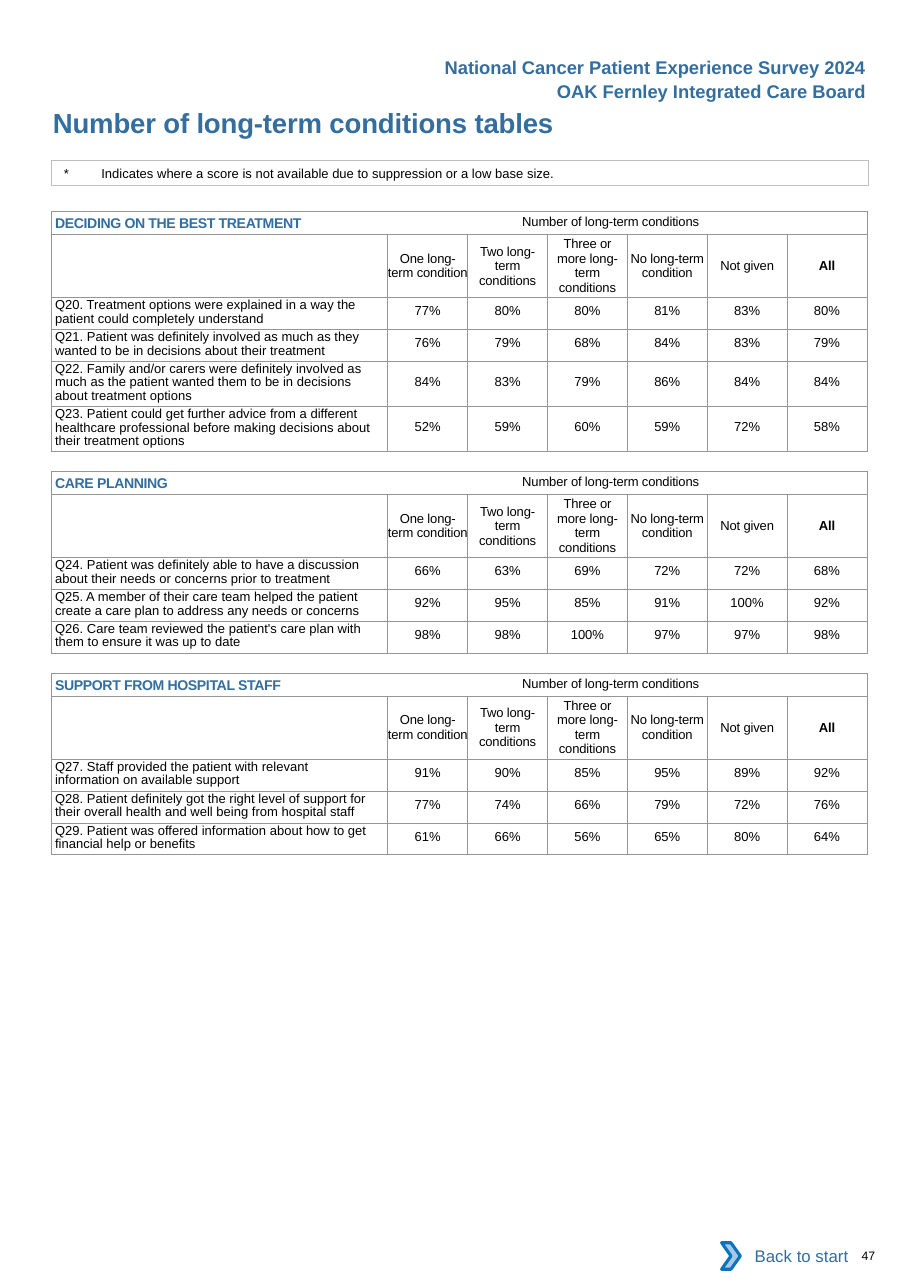
"""Build the page of survey tables by number of long-term conditions."""
from lxml import etree
from pptx import Presentation
from pptx.dml.color import RGBColor
from pptx.enum.shapes import MSO_SHAPE
from pptx.enum.text import MSO_ANCHOR, PP_ALIGN
from pptx.oxml.ns import qn
from pptx.util import Inches, Pt

BLUE = RGBColor(0x33, 0x6E, 0x9F)
BLACK = RGBColor(0, 0, 0)
WHITE = RGBColor(0xFF, 0xFF, 0xFF)
SILVER = RGBColor(0xBF, 0xBF, 0xBF)
GREY = RGBColor(0x93, 0x95, 0x98)
SKY = RGBColor(0xA8, 0xC7, 0xE9)
AZURE = RGBColor(0x0A, 0x74, 0xBB)
RECT, CHEVRON = MSO_SHAPE.RECTANGLE, MSO_SHAPE.CHEVRON
TOP, MIDDLE = MSO_ANCHOR.TOP, MSO_ANCHOR.MIDDLE
LEFT, CENTER, RIGHT = PP_ALIGN.LEFT, PP_ALIGN.CENTER, PP_ALIGN.RIGHT

SIDES = ("margin_left", "margin_top", "margin_right", "margin_bottom")
BODY = {"size": Pt(8.5), "bold": False}
BOLD = {"size": Pt(8.5), "bold": True}
HEAD = {"size": Pt(15.8), "bold": True}
TITLE = {"size": Pt(18), "bold": True}
BANNER = {"size": Pt(12), "bold": True}
LINK = {"size": Pt(11), "bold": False}
FOLIO = {"size": Pt(8), "bold": False}

GROUPS = ["One long-term condition", "Two long-term conditions",
          "Three or more long-term conditions", "No long-term condition",
          "Not given", "All"]
TABLES = [
    ("DECIDING ON THE BEST TREATMENT", [
        (2, "Q20. Treatment options were explained in a way the patient could completely understand",
         (77, 80, 80, 81, 83, 80)),
        (2, "Q21. Patient was definitely involved as much as they wanted to be in decisions about their treatment",
         (76, 79, 68, 84, 83, 79)),
        (3, "Q22. Family and/or carers were definitely involved as much as the patient wanted them to be in decisions about treatment options",
         (84, 83, 79, 86, 84, 84)),
        (3, "Q23. Patient could get further advice from a different healthcare professional before making decisions about their treatment options",
         (52, 59, 60, 59, 72, 58)),
    ]),
    ("CARE PLANNING", [
        (2, "Q24. Patient was definitely able to have a discussion about their needs or concerns prior to treatment",
         (66, 63, 69, 72, 72, 68)),
        (2, "Q25. A member of their care team helped the patient create a care plan to address any needs or concerns",
         (92, 95, 85, 91, 100, 92)),
        (2, "Q26. Care team reviewed the patient's care plan with them to ensure it was up to date",
         (98, 98, 100, 97, 97, 98)),
    ]),
    ("SUPPORT FROM HOSPITAL STAFF", [
        (2, "Q27. Staff provided the patient with relevant information on available support",
         (91, 90, 85, 95, 89, 92)),
        (2, "Q28. Patient definitely got the right level of support for their overall health and well being from hospital staff",
         (77, 74, 66, 79, 72, 76)),
        (2, "Q29. Patient was offered information about how to get financial help or benefits",
         (61, 66, 56, 65, 80, 64)),
    ]),
]


def write(par, text, look, color=BLACK, align=LEFT, space=0):
    par.alignment = align
    run = par.add_run()
    run.text = text
    run.font.name = "Arial"
    run.font.color.rgb = color
    run.font._element.set("spc", str(space))
    for name, value in look.items():
        setattr(run.font, name, value)
    return run


def indent(par, left, tab=None):
    props = par._p.get_or_add_pPr()
    props.set("marL", str(Inches(left)))
    if tab:
        tabs = etree.SubElement(props, qn("a:tabLst"))
        etree.SubElement(tabs, qn("a:tab"), pos=str(Inches(tab)), algn="l")


deck = Presentation()
deck.slide_width, deck.slide_height = Inches(8.26), Inches(11.69)
slide = deck.slides.add_slide(deck.slide_layouts[5])
shapes = slide.shapes

title = shapes.title
title.left, title.top = Inches(0.47), Inches(0.96)
title.width, title.height = Inches(4.66), Inches(0.3)
frame = title.text_frame
frame.vertical_anchor = TOP
for side in SIDES:
    setattr(frame, side, 0)
write(frame.paragraphs[0], "Number of long-term conditions tables", TITLE, BLUE, space=-10)
indent(frame.paragraphs[0], 0.01)

for left, top, width, text in [
    (3.92, 0.46, 4.04, "National Cancer Patient Experience Survey 2024"),
    (4.95, 0.68, 3.01, "OAK Fernley Integrated Care Board"),
]:
    box = shapes.add_textbox(Inches(left), Inches(top), Inches(width), Inches(0.3))
    box.text_frame.word_wrap = False
    write(box.text_frame.paragraphs[0], text, BANNER, BLUE, RIGHT)

note = shapes.add_shape(RECT, Inches(0.47), Inches(1.46), Inches(7.41), Inches(0.22))
note.shadow.inherit = False
note.fill.background()
note.line.color.rgb = SILVER
note.line.width = Pt(0.5)
frame = note.text_frame
frame.vertical_anchor = TOP
for side, gap in zip(SIDES, (0, 0.04, 0, 0.04)):
    setattr(frame, side, Inches(gap))
write(frame.paragraphs[0],
      "*\tIndicates where a score is not available due to suppression or a low base size.", BODY)
indent(frame.paragraphs[0], 0.11, 0.34)

top = 1.92
for name, asks in TABLES:
    heights = [0.21, 0.57] + [0.05 + 0.12 * lines for lines, _, _ in asks]
    total = sum(heights)
    grid = shapes.add_table(len(heights), 7, Inches(0.47), Inches(top),
                            Inches(7.4), Inches(total)).table
    grid.first_row = grid.horz_banding = False
    for row, height in zip(grid.rows, heights):
        row.height = Inches(height)
    for spot, column in enumerate(grid.columns):
        column.width = Inches((7.4 - 3.05) / 6 if spot else 3.05)
    for cell in grid.iter_cells():
        for side in SIDES:
            setattr(cell, side, 0)
        cell.vertical_anchor = MIDDLE
        props = cell._tc.get_or_add_tcPr()
        for edge in "LRTB":
            line = etree.SubElement(props, qn("a:ln" + edge), w=str(Pt(0.5)))
            fill = etree.SubElement(line, qn("a:solidFill"))
            etree.SubElement(fill, qn("a:srgbClr"), val=str(GREY))
        cell.fill.background()

    head = grid.cell(0, 0)
    head.merge(grid.cell(0, 6))
    par = head.text_frame.paragraphs[0]
    par.line_spacing = Pt(11.8)
    run = write(par, name + "\t", HEAD, BLUE, space=-20)
    run.font._element.set("baseline", "-8000")
    write(par, "Number of long-term conditions", BODY, space=-10)
    indent(par, 0.03, 4.24)

    for spot, group in enumerate(GROUPS, 1):
        look = BOLD if group == "All" else BODY
        write(grid.cell(1, spot).text_frame.paragraphs[0], group, look,
              align=CENTER, space=-10)

    for row, (lines, ask, scores) in enumerate(asks, 2):
        cell = grid.cell(row, 0)
        cell.vertical_anchor = TOP
        cell.margin_top, cell.margin_right = Inches(0.02), Inches(0.13)
        par = cell.text_frame.paragraphs[0]
        par.line_spacing = Pt(8.6)
        write(par, ask, BODY)
        indent(par, 0.03)
        for spot, score in enumerate(scores, 1):
            cell = grid.cell(row, spot)
            cell.vertical_anchor = TOP
            cell.margin_top = Inches(0.06 * (lines - 1))
            write(cell.text_frame.paragraphs[0], f"{score}%", BODY, align=CENTER)
    top += total + 0.18

back = shapes.add_shape(RECT, Inches(6.62), Inches(11.19), Inches(1.18), Inches(0.42))
back.shadow.inherit = False
back.fill.solid()
back.fill.fore_color.rgb = WHITE
back.line.fill.background()
back.text_frame.vertical_anchor = MIDDLE
write(back.text_frame.paragraphs[0], "Back to start", LINK, BLUE, RIGHT)

arrow = shapes.add_shape(CHEVRON, Inches(6.55), Inches(11.28), Inches(0.17), Inches(0.24))
arrow.shadow.inherit = False
arrow.fill.solid()
arrow.fill.fore_color.rgb = SKY
arrow.line.color.rgb = AZURE
arrow.line.width = Pt(2)

folio = shapes.add_textbox(Inches(7.72), Inches(11.33), Inches(0.51), Inches(0.13))
frame = folio.text_frame
frame.word_wrap = True
for side in SIDES:
    setattr(frame, side, 0)
write(frame.paragraphs[0], "47", FOLIO)
indent(frame.paragraphs[0], 0.1)

deck.save("out.pptx")
